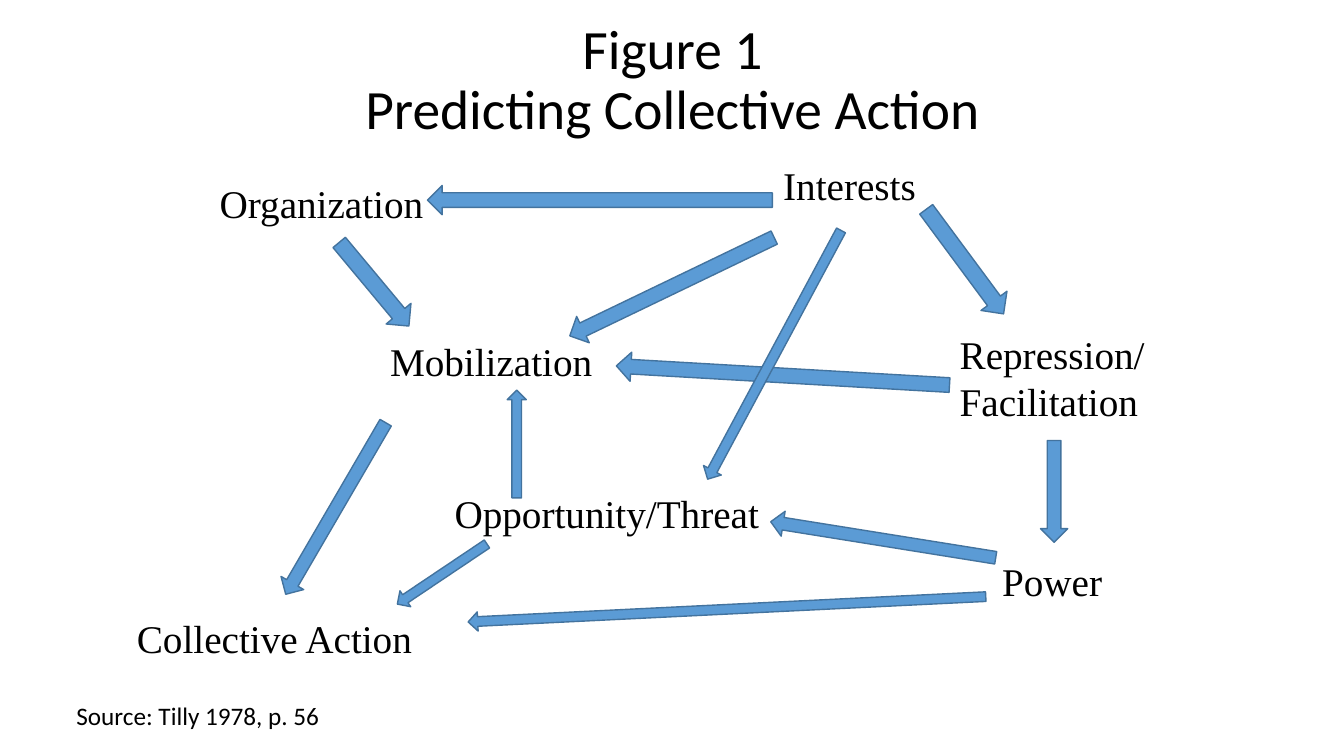
from dataclasses import dataclass

from pptx import Presentation
from pptx.dml.color import RGBColor
from pptx.enum.shapes import MSO_SHAPE
from pptx.enum.text import MSO_ANCHOR, MSO_AUTO_SIZE, PP_ALIGN
from pptx.slide import Slide
from pptx.util import Inches, Length, Pt

COLORS = {"text": "000000", "arrow": "5B9BD5", "outline": "43739E"}
TITLE_FONT = "Calibri"
CONCEPT_FONT = "Times New Roman"
CELL = 0.1  # inches per grid column and row
TITLE_ONLY = 5


@dataclass(frozen=True)
class Box:
    col: float
    row: float
    cols: float
    rows: float


@dataclass(frozen=True)
class Label:
    lines: tuple[str, ...]
    box: Box
    font: str = CONCEPT_FONT
    size: float = 28


@dataclass(frozen=True)
class Arrow:
    preset: MSO_SHAPE
    box: Box
    rotation: float = 0


LABELS = [
    Label(("Organization",), Box(20.8, 17.3, 22.4, 5.7)),
    Label(("Interests",), Box(76.7, 15.5, 15.3, 5.7)),
    Label(("Mobilization",), Box(37.7, 33, 22.3, 5.7)),
    Label(("Repression/", "Facilitation"), Box(94.2, 32.3, 20.5, 10.4)),
    Label(("Collective Action",), Box(12.6, 60.5, 29.6, 5.7)),
    Label(("Power",), Box(98.4, 54.8, 12.1, 5.7)),
    Label(("Opportunity/Threat",), Box(44.1, 48.1, 32.5, 5.7)),
    Label(("Source: Tilly 1978, p. 56",), Box(6.6, 69, 26.4, 4), TITLE_FONT, 18),
]

LEFT, RIGHT = MSO_SHAPE.LEFT_ARROW, MSO_SHAPE.RIGHT_ARROW
UP, DOWN = MSO_SHAPE.UP_ARROW, MSO_SHAPE.DOWN_ARROW
ARROWS = [
    Arrow(RIGHT, Box(42.4, 18.4, 34.2, 2.9), 180),  # Interests to Organization
    Arrow(RIGHT, Box(31.7, 26.6, 10.8, 3.2), 50.2),  # Organization to Mobilization
    Arrow(DOWN, Box(65.2, 17.2, 2.9, 22.5), 64.3),  # Interests to Mobilization
    Arrow(DOWN, Box(103.2, 43.7, 2.7, 10.1)),  # Repression to Power
    Arrow(LEFT, Box(61.1, 35.8, 33.1, 2.9), 3.3),  # Repression to Mobilization
    Arrow(DOWN, Box(32, 40.6, 2.6, 19.7), 30.2),  # Mobilization to Collective Action
    Arrow(DOWN, Box(75.8, 21.2, 2, 28), 28.2),  # Interests to Opportunity
    Arrow(UP, Box(50.3, 38.7, 1.9, 10.7)),  # Opportunity to Mobilization
    Arrow(LEFT, Box(76.3, 52.3, 22.6, 2.5), 9.1),  # Power to Opportunity
    Arrow(DOWN, Box(42.9, 51.6, 1.9, 10.7), 56.1),  # Opportunity to Collective Action
    Arrow(LEFT, Box(46.4, 59.5, 51.4, 1.9), 357.2),  # Power to Collective Action
    Arrow(DOWN, Box(94.1, 19.5, 3.2, 12.9), 323.5),  # Interests to Repression
]


def color(name: str) -> RGBColor:
    return RGBColor.from_string(COLORS[name])


def place(box: Box) -> tuple[Length, ...]:
    """Turn grid cells into left, top, width and height."""
    return tuple(Inches(n * CELL) for n in (box.col, box.row, box.cols, box.rows))


def add_run(paragraph, text: str, font: str, size: float) -> None:
    run = paragraph.add_run()
    run.text = text
    run.font.name = font
    run.font.size = Pt(size)
    run.font.color.rgb = color("text")


def set_title(slide: Slide, lines: tuple[str, ...], box: Box) -> None:
    title = slide.shapes.title
    title.left, title.top, title.width, title.height = place(box)
    frame = title.text_frame
    frame.auto_size = MSO_AUTO_SIZE.NONE
    frame.vertical_anchor = MSO_ANCHOR.MIDDLE
    paragraph = frame.paragraphs[0]
    paragraph.alignment = PP_ALIGN.CENTER
    paragraph.line_spacing = 0.9
    for index, line in enumerate(lines):
        if index:
            paragraph.add_line_break()
        add_run(paragraph, line, TITLE_FONT, 39.6)


def add_label(slide: Slide, label: Label) -> None:
    frame = slide.shapes.add_textbox(*place(label.box)).text_frame
    frame.word_wrap = False
    frame.auto_size = MSO_AUTO_SIZE.SHAPE_TO_FIT_TEXT
    for index, line in enumerate(label.lines):
        paragraph = frame.add_paragraph() if index else frame.paragraphs[0]
        add_run(paragraph, line, label.font, label.size)


def add_arrow(slide: Slide, arrow: Arrow) -> None:
    block = slide.shapes.add_shape(arrow.preset, *place(arrow.box))
    block.rotation = arrow.rotation
    block.shadow.inherit = False
    block.fill.solid()
    block.fill.fore_color.rgb = color("arrow")
    block.line.color.rgb = color("outline")
    block.line.width = Pt(1)


def main() -> None:
    deck = Presentation()
    deck.slide_width, deck.slide_height = Inches(13.33), Inches(7.5)
    slide = deck.slides.add_slide(deck.slide_layouts[TITLE_ONLY])
    set_title(slide, ("Figure 1", "Predicting Collective Action"), Box(9.2, 4, 115, 8.1))
    for label in LABELS:
        add_label(slide, label)
    for arrow in ARROWS:
        add_arrow(slide, arrow)
    deck.save("out.pptx")


if __name__ == "__main__":
    main()
